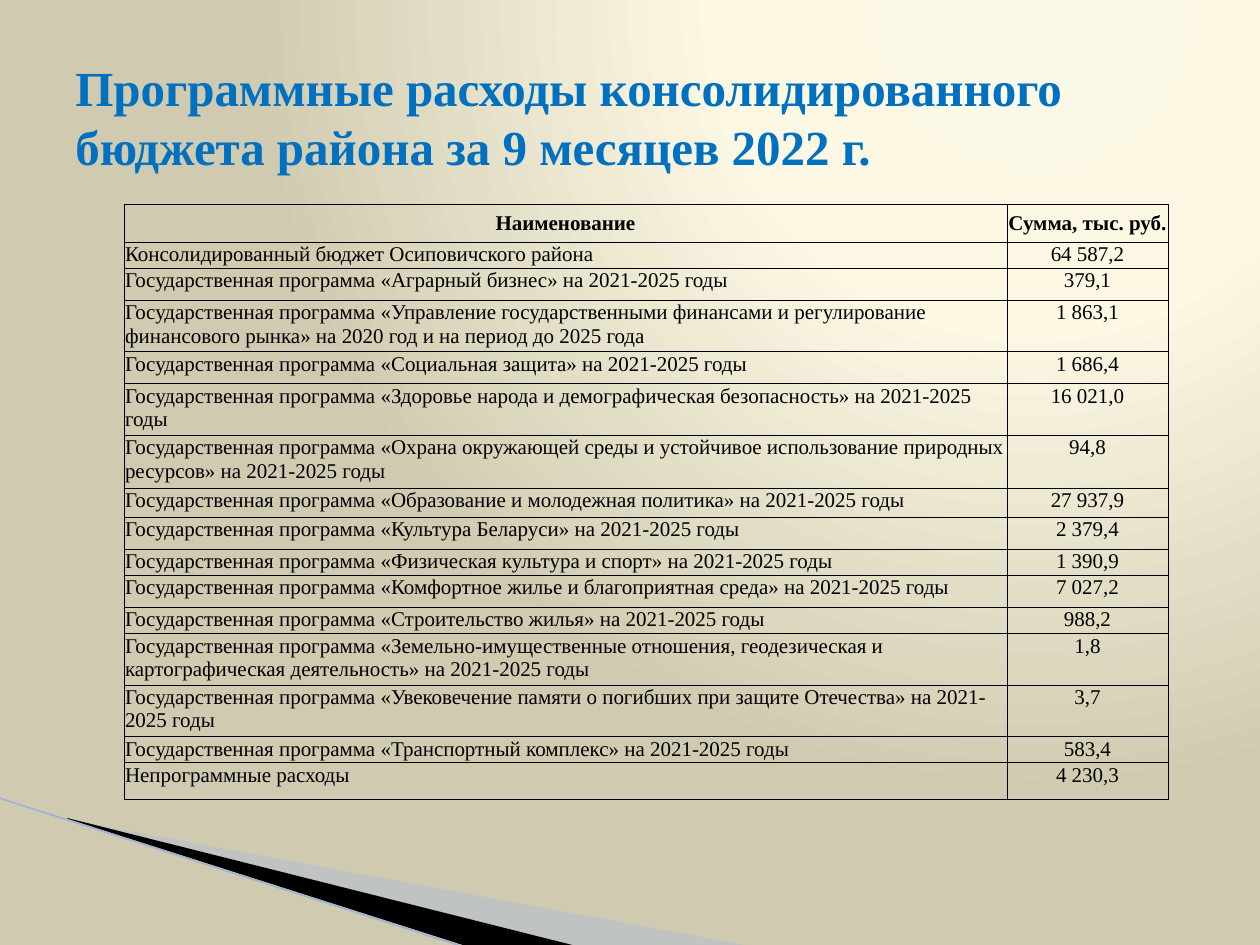
from typing import NamedTuple

import lxml.etree
import pptx
import pptx.dml.color
import pptx.enum.shapes
import pptx.enum.text
import pptx.oxml
import pptx.oxml.ns
import pptx.util

EMU_PER_PX = 914400 / 126
FONT = "Times New Roman"
BLACK = pptx.dml.color.RGBColor(0x00, 0x00, 0x00)
TITLE_BLUE = pptx.dml.color.RGBColor(0x00, 0x70, 0xC0)
PALE_BLUE = pptx.dml.color.RGBColor(0xA7, 0xB9, 0xDB)
LINE_BLUE = pptx.dml.color.RGBColor(0x9E, 0xB3, 0xD6)
CREAM = pptx.dml.color.RGBColor(0xFD, 0xF9, 0xE8)
LIGHT_SAND = pptx.dml.color.RGBColor(0xFC, 0xF8, 0xE4)
SAND = pptx.dml.color.RGBColor(0xD0, 0xCB, 0xB0)
BACKGROUND_STOPS = [(0, CREAM), (40, LIGHT_SAND), (100, SAND)]
COLUMN_WIDTHS = [883, 161]


class Wedge(NamedTuple):
    points: list[tuple[int, int]]
    color: pptx.dml.color.RGBColor
    opacity: int


class BudgetRow(NamedTuple):
    name: str
    amount: str
    height: int


WEDGES = [
    Wedge([(69, 820), (750, 946), (575, 946), (69, 819)], PALE_BLUE, 40),
    Wedge([(67, 818), (576, 946), (469, 947), (68, 819)], BLACK, 100),
]


def program(title: str, amount: str, height: int, period: str = "2021-2025 годы") -> BudgetRow:
    return BudgetRow(f"Государственная программа «{title}» на {period}", amount, height)


ROWS = [
    BudgetRow("Наименование", "Сумма, тыс. руб.", 38),
    BudgetRow("Консолидированный бюджет Осиповичского района", "64 587,2", 26),
    program("Аграрный бизнес", "379,1", 32),
    program("Управление государственными финансами и регулирование финансового рынка",
            "1 863,1", 50, "2020 год и на период до 2025 года"),
    program("Социальная защита", "1 686,4", 32),
    program("Здоровье народа и демографическая безопасность", "16 021,0", 48),
    program("Охрана окружающей среды и устойчивое использование природных ресурсов",
            "94,8", 53),
    program("Образование и молодежная политика", "27 937,9", 29),
    program("Культура Беларуси", "2 379,4", 32),
    program("Физическая культура и спорт", "1 390,9", 26),
    program("Комфортное жилье и благоприятная среда", "7 027,2", 32),
    program("Строительство жилья", "988,2", 26),
    program("Земельно-имущественные отношения, геодезическая и картографическая деятельность",
            "1,8", 50),
    program("Увековечение памяти о погибших при защите Отечества", "3,7", 51),
    program("Транспортный комплекс", "583,4", 25),
    BudgetRow("Непрограммные расходы", "4 230,3", 37),
]


def px(length: int) -> pptx.util.Emu:
    return pptx.util.Emu(round(length * EMU_PER_PX))


def add_child(parent, tag: str, **attributes: str):
    child = lxml.etree.SubElement(parent, pptx.oxml.ns.qn(tag))
    for name, value in attributes.items():
        child.set(name, value)
    return child


def paint_background(slide) -> None:
    slide.background.fill.gradient()
    gradient = next(slide.element.iter(pptx.oxml.ns.qn("a:gradFill")))
    for child in list(gradient):
        gradient.remove(child)
    stops = add_child(gradient, "a:gsLst")
    for position, color in BACKGROUND_STOPS:
        stop = add_child(stops, "a:gs", pos=str(position * 1000))
        add_child(stop, "a:srgbClr", val=str(color))
    circle = add_child(gradient, "a:path", path="circle")
    add_child(circle, "a:fillToRect", l="65000", t="0", r="0", b="98000")


def add_wedge(slide, wedge: Wedge) -> None:
    builder = slide.shapes.build_freeform(*wedge.points[0], scale=EMU_PER_PX)
    builder.add_line_segments(wedge.points[1:], close=True)
    shape = builder.convert_to_shape()
    shape.shadow.inherit = False
    shape.fill.solid()
    shape.fill.fore_color.rgb = wedge.color
    shape.line.fill.background()
    if wedge.opacity < 100:
        color = next(shape.element.spPr.iter(pptx.oxml.ns.qn("a:srgbClr")))
        add_child(color, "a:alpha", val=str(wedge.opacity * 1000))


def add_edge_line(slide) -> None:
    line = slide.shapes.add_connector(
        pptx.enum.shapes.MSO_CONNECTOR.STRAIGHT, px(-1), px(798), px(467), px(948))
    line.line.color.rgb = LINE_BLUE
    line.line.width = pptx.util.Pt(0.95)
    add_child(line.element.spPr, "a:effectLst")


def style_paragraph(para, size: int, color: pptx.dml.color.RGBColor, bold: bool) -> None:
    para.font.name = FONT
    para.font.size = pptx.util.Pt(size)
    para.font.bold = bold
    para.font.color.rgb = color


def add_title(slide, text: str) -> None:
    box = slide.shapes.add_textbox(px(63), px(38), px(1134), px(157))
    frame = box.text_frame
    frame.word_wrap = True
    frame.vertical_anchor = pptx.enum.text.MSO_ANCHOR.MIDDLE
    frame.text = text
    style_paragraph(frame.paragraphs[0], 28, TITLE_BLUE, True)


def add_borders(cell) -> None:
    properties = cell._tc.get_or_add_tcPr()
    for index, side in enumerate(("a:lnL", "a:lnR", "a:lnT", "a:lnB")):
        border = pptx.oxml.parse_xml(
            f'<{side} {pptx.oxml.ns.nsdecls("a")} w="6350"><a:solidFill>'
            f'<a:srgbClr val="{BLACK}"/></a:solidFill></{side}>')
        properties.insert(index, border)


def fill_cell(cell, text: str, header: bool, centered: bool) -> None:
    cell.margin_left = cell.margin_right = cell.margin_top = px(1)
    cell.margin_bottom = 0
    anchors = pptx.enum.text.MSO_ANCHOR
    cell.vertical_anchor = anchors.MIDDLE if header else anchors.TOP
    cell.fill.background()
    add_borders(cell)
    cell.text = text
    para = cell.text_frame.paragraphs[0]
    if centered:
        para.alignment = pptx.enum.text.PP_ALIGN.CENTER
    style_paragraph(para, 12, BLACK, header)


def add_budget_table(slide) -> None:
    total_height = sum(row.height for row in ROWS)
    table = slide.shapes.add_table(
        len(ROWS), len(COLUMN_WIDTHS), px(124), px(204),
        px(sum(COLUMN_WIDTHS)), px(total_height)).table
    table.first_row = table.horz_banding = False
    for column, width in zip(table.columns, COLUMN_WIDTHS):
        column.width = px(width)
    for index, row in enumerate(ROWS):
        header = index == 0
        table.rows[index].height = px(row.height)
        fill_cell(table.cell(index, 0), row.name, header, centered=header)
        fill_cell(table.cell(index, 1), row.amount, header, centered=True)


def main() -> None:
    deck = pptx.Presentation()
    deck.slide_width, deck.slide_height = px(1260), px(945)
    slide = deck.slides.add_slide(deck.slide_layouts[6])
    paint_background(slide)
    for wedge in WEDGES:
        add_wedge(slide, wedge)
    add_edge_line(slide)
    add_title(slide, "Программные расходы консолидированного бюджета района за 9 месяцев 2022 г.")
    add_budget_table(slide)
    deck.save("out.pptx")


if __name__ == "__main__":
    main()
